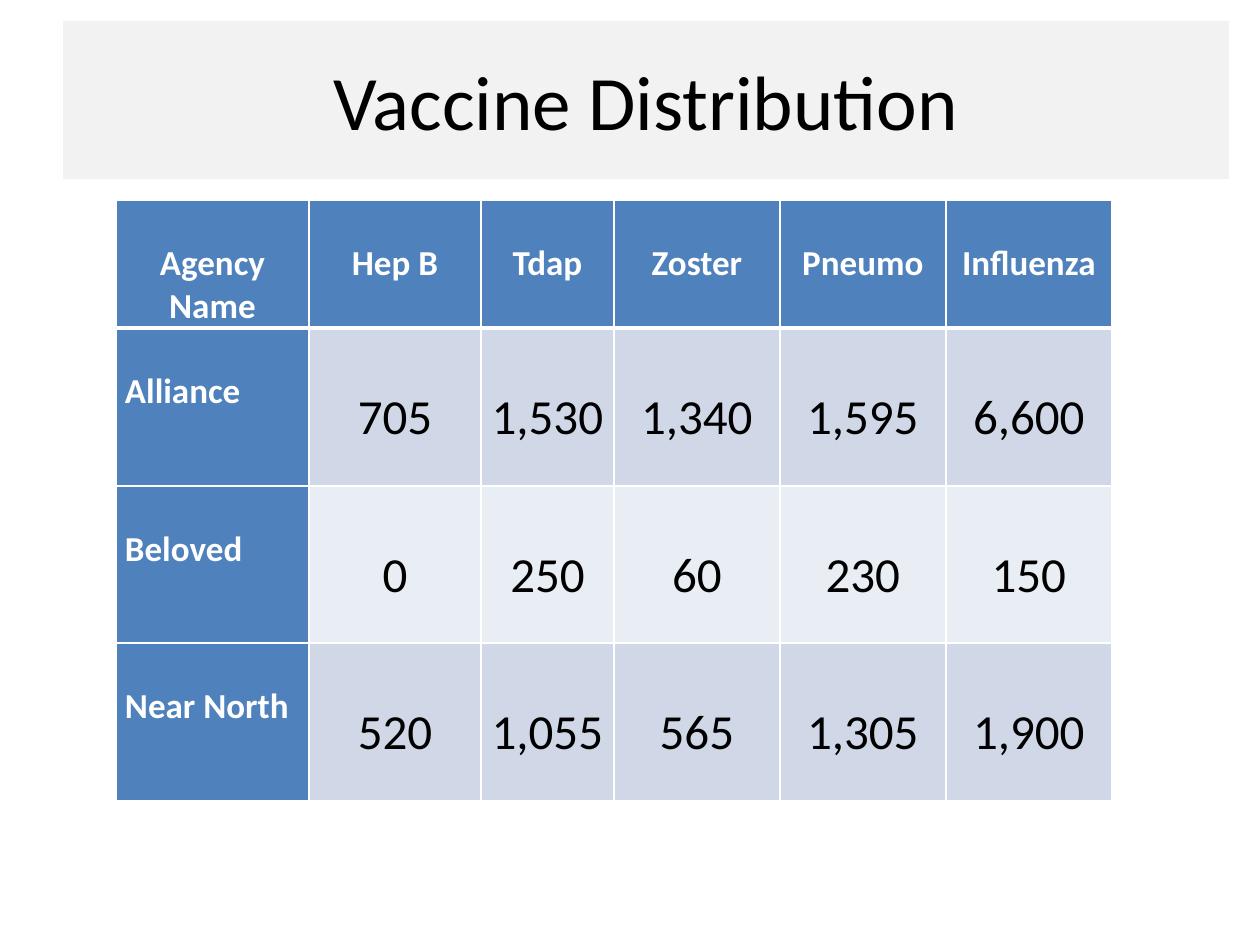
"""Build a slide with a table of vaccine doses per agency."""
from lxml import etree
from pptx import Presentation
from pptx.dml.color import RGBColor
from pptx.enum.text import MSO_ANCHOR, PP_ALIGN
from pptx.oxml.ns import qn
from pptx.util import Pt

MIDDLE, TOP = MSO_ANCHOR.MIDDLE, MSO_ANCHOR.TOP
LEFT, CENTER = PP_ALIGN.LEFT, PP_ALIGN.CENTER
BLACK = RGBColor(0x00, 0x00, 0x00)
WHITE = RGBColor(0xFF, 0xFF, 0xFF)
GREY = RGBColor(0xF2, 0xF2, 0xF2)
BLUE = RGBColor(0x4F, 0x81, 0xBD)
BANDS = [RGBColor(0xD0, 0xD8, 0xE8), RGBColor(0xE9, 0xED, 0xF4)]
SCALE = 914400 / 126

ROWS = [
    ["Agency Name", "Hep B", "Tdap", "Zoster", "Pneumo", "Influenza"],
    ["Alliance", "705", "1,530", "1,340", "1,595", "6,600"],
    ["Beloved", "0", "250", "60", "230", "150"],
    ["Near North", "520", "1,055", "565", "1,305", "1,900"],
]
WIDTHS = [193, 172, 133, 166, 166, 166]
HEIGHTS = [128, 158, 157, 158]
HEAD = {"size": Pt(20), "bold": True, "name": "Calibri"}
BODY = {"size": Pt(28), "bold": False, "name": "Calibri"}


def px(count):
    return round(count * SCALE)


def border(cell, side, width):
    line = etree.SubElement(cell._tc.get_or_add_tcPr(), qn("a:ln" + side), w=str(Pt(width)))
    fill = etree.SubElement(line, qn("a:solidFill"))
    etree.SubElement(fill, qn("a:srgbClr"), val=str(WHITE))


deck = Presentation()
deck.slide_width, deck.slide_height = px(1260), px(945)
slide = deck.slides.add_slide(deck.slide_layouts[5])

title = slide.shapes.title
place = {"left": 63, "top": 21, "width": 1166, "height": 158}
for name, value in place.items():
    setattr(title, name, px(value))
title.fill.solid()
title.fill.fore_color.rgb = GREY
title.text_frame.text = "Vaccine Distribution"
title.text_frame.vertical_anchor = MIDDLE
head = title.text_frame.paragraphs[0]
head.alignment = CENTER
head.font.size = Pt(44)
head.font.name = "Calibri"
head.font.color.rgb = BLACK

frame = slide.shapes.add_table(
    len(ROWS), len(WIDTHS), px(116), px(200), px(sum(WIDTHS)), px(sum(HEIGHTS))
)
table = frame.table
table.first_col = True
for col, width in zip(table.columns, WIDTHS):
    col.width = px(width)
for row, height in zip(table.rows, HEIGHTS):
    row.height = px(height)

for r, row in enumerate(ROWS):
    for c, text in enumerate(row):
        cell = table.cell(r, c)
        label = r == 0 or c == 0
        cell.text = text
        cell.vertical_anchor = TOP
        cell.margin_left = cell.margin_right = px(9)
        cell.margin_top = px(42 if label else 60)
        cell.margin_bottom = 0
        sides = {"L": 1, "R": 1, "T": 3 if r == 1 else 1, "B": 3 if r == 0 else 1}
        for side, width in sides.items():
            border(cell, side, width)
        cell.fill.solid()
        cell.fill.fore_color.rgb = BLUE if label else BANDS[(r - 1) % 2]
        para = cell.text_frame.paragraphs[0]
        para.alignment = LEFT if c == 0 and r > 0 else CENTER
        for name, value in (HEAD if label else BODY).items():
            setattr(para.font, name, value)
        para.font.color.rgb = WHITE if label else BLACK

deck.save("out.pptx")
